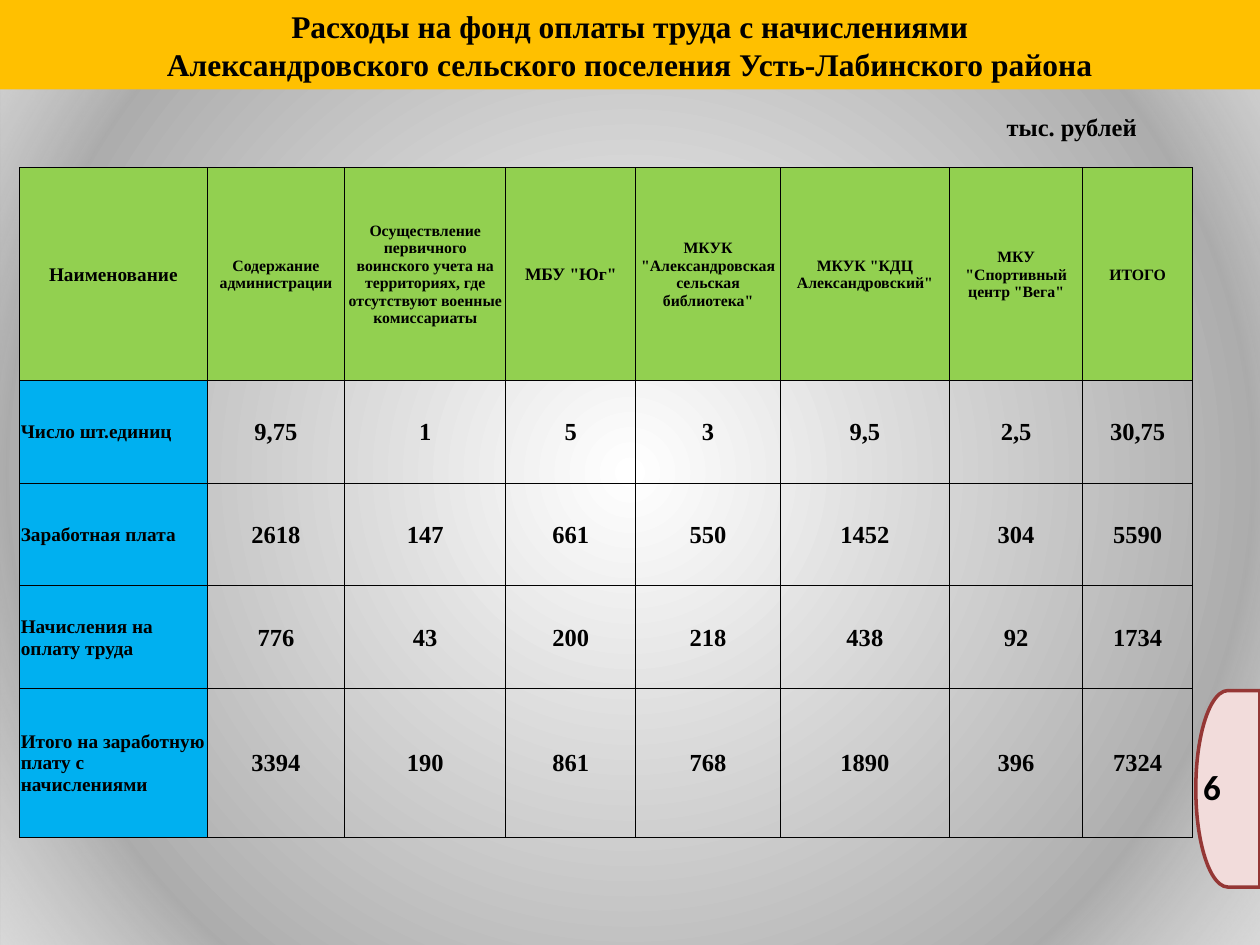
from dataclasses import dataclass

from pptx import Presentation
from pptx.dml.color import RGBColor
from pptx.enum.shapes import MSO_SHAPE
from pptx.enum.text import MSO_ANCHOR, MSO_AUTO_SIZE, PP_ALIGN
from pptx.oxml import parse_xml
from pptx.oxml.ns import nsdecls
from pptx.util import Inches, Pt

RECT, DELAY = MSO_SHAPE.RECTANGLE, MSO_SHAPE.FLOWCHART_DELAY
LEFT, MID = PP_ALIGN.LEFT, PP_ALIGN.CENTER
TITLE_ONLY = 5
COLS, ROWS = 100, 75  # the slide grid


@dataclass(frozen=True)
class Theme:
    serif: str = "Times New Roman"
    sans: str = "Calibri"
    ink: str = "000000"
    band: str = "FFC000"
    head: str = "92D050"
    side: str = "00B0F0"
    tab: str = "F2DCDB"
    edge: str = "953735"
    # gradient stops: position, colour, opacity (percent)
    back: tuple = ((0, "FFFFFF", 100), (100, "979797", 100))
    glow: tuple = ((79, "FFFFFF", 0), (100, "D9D9D9", 100))
    title: int = 18
    page: int = 20
    body: int = 14
    label: int = 11
    mid: int = 10
    small: int = 9


def paint(fill, color):
    fill.solid()
    fill.fore_color.rgb = RGBColor.from_string(color)


def radial(solid, stops):
    """Replace a solid fill element by a gradient from the centre out."""
    marks = "".join(
        f'<a:gs pos="{pos * 1000}"><a:srgbClr val="{color}">'
        f'<a:alpha val="{alpha * 1000}"/></a:srgbClr></a:gs>'
        for pos, color, alpha in stops)
    grad = parse_xml(
        f'<a:gradFill {nsdecls("a")} rotWithShape="1"><a:gsLst>{marks}</a:gsLst>'
        '<a:path path="circle"><a:fillToRect l="50000" t="50000" r="50000" b="50000"/>'
        '</a:path></a:gradFill>')
    solid.getparent().replace(solid, grad)


class Page:
    def __init__(self, deck, theme):
        self.theme = theme
        self.wide, self.high = deck.slide_width, deck.slide_height
        self.slide = deck.slides.add_slide(deck.slide_layouts[TITLE_ONLY])
        self.shapes = self.slide.shapes

    def area(self, x, y, w, h):
        dx, dy = self.wide / COLS, self.high / ROWS
        return [round(v) for v in (x * dx, y * dy, w * dx, h * dy)]

    def words(self, frame, text, size, align=LEFT, font=None):
        frame.text = text
        frame.word_wrap = True
        for par in frame.paragraphs:
            par.alignment = align
            par.font.name = font or self.theme.serif
            par.font.size = Pt(size)
            par.font.bold = True
            par.font.color.rgb = RGBColor.from_string(self.theme.ink)

    def backdrop(self):
        paint(self.slide.background.fill, self.theme.back[0][1])
        radial(self.slide.element.xpath(".//p:bgPr/a:solidFill")[0], self.theme.back)
        glow = self.shape(self.shapes, RECT, (0, 0, COLS, ROWS), self.theme.ink)
        radial(glow.element.xpath("./p:spPr/a:solidFill")[0], self.theme.glow)
        self.shapes.element.insert(2, glow.element)

    def title(self, text, box):
        head = self.shapes.title
        head.left, head.top, head.width, head.height = self.area(*box)
        paint(head.fill, self.theme.band)
        self.words(head.text_frame, text, self.theme.title, MID)
        head.text_frame.auto_size = MSO_AUTO_SIZE.NONE
        head.text_frame.vertical_anchor = MSO_ANCHOR.MIDDLE

    def shape(self, home, kind, box, fill, edge=None):
        item = home.add_shape(kind, *self.area(*box))
        item.shadow.inherit = False
        paint(item.fill, fill)
        if edge:
            paint(item.line.fill, edge)
            item.line.width = Pt(2)
        else:
            item.line.fill.background()
        return item

    def text(self, home, text, box, size, font=None):
        item = home.add_textbox(*self.area(*box))
        self.words(item.text_frame, text, size, font=font)

    def badge(self, text):
        """Page number on a tab at the right edge."""
        group = self.shapes.add_group_shape().shapes
        tab = self.shape(group, DELAY, (94.9, 54.8, 5.1, 15.6),
                         self.theme.tab, self.theme.edge)
        tab.rotation = 180
        self.text(group, text, (94.5, 60.3, 5.4, 4.4), self.theme.page, self.theme.sans)

    def border(self, cell):
        props = cell._tc.get_or_add_tcPr()
        for spot, side in enumerate("LRTB"):
            props.insert(spot, parse_xml(
                f'<a:ln{side} {nsdecls("a")} w="{Pt(0.5)}"><a:solidFill>'
                f'<a:srgbClr val="{self.theme.ink}"/></a:solidFill></a:ln{side}>'))

    def table(self, x, y, wides, highs, data, sizes):
        box = self.area(x, y, sum(wides), sum(highs))
        grid = self.shapes.add_table(len(highs), len(wides), *box).table
        grid.first_row = grid.horz_banding = False
        for col, wide in zip(grid.columns, wides):
            col.width = self.area(0, 0, wide, 0)[2]
        for row, high in zip(grid.rows, highs):
            row.height = self.area(0, 0, 0, high)[3]
        for r, line in enumerate(data):
            for c, text in enumerate(line):
                cell = grid.cell(r, c)
                cell.margin_left = cell.margin_right = cell.margin_top = Inches(0.01)
                cell.margin_bottom = 0
                cell.vertical_anchor = MSO_ANCHOR.MIDDLE
                if r == 0:
                    size, align, fill = sizes[c], MID, self.theme.head
                elif c == 0:
                    size, align, fill = self.theme.label, LEFT, self.theme.side
                else:
                    size, align, fill = self.theme.body, MID, None
                self.words(cell.text_frame, text, size, align)
                if fill:
                    paint(cell.fill, fill)
                else:
                    cell.fill.background()
                self.border(cell)


DATA = [
    ["Наименование", "Содержание администрации",
     "Осуществление первичного воинского учета на территориях, "
     "где отсутствуют военные комиссариаты",
     'МБУ "Юг"', 'МКУК "Александровская сельская библиотека"',
     'МКУК "КДЦ Александровский"', 'МКУ "Спортивный центр "Вега"', "ИТОГО"],
    ["Число шт.единиц", "9,75", "1", "5", "3", "9,5", "2,5", "30,75"],
    ["Заработная плата", "2618", "147", "661", "550", "1452", "304", "5590"],
    ["Начисления на оплату труда", "776", "43", "200", "218", "438", "92", "1734"],
    ["Итого на заработную плату с начислениями",
     "3394", "190", "861", "768", "1890", "396", "7324"],
]
WIDES = [14.9, 10.9, 12.8, 10.3, 11.5, 13.4, 10.6, 8.7]
HIGHS = [16.9] + [8.15] * 3 + [11.8]


def main():
    deck = Presentation()
    deck.slide_width, deck.slide_height = Inches(10), Inches(7.5)
    theme = Theme()
    page = Page(deck, theme)
    page.backdrop()
    page.title("Расходы на фонд оплаты труда с начислениями\n"
               "Александровского сельского поселения Усть-Лабинского района",
               (0, 0, COLS, 7.1))
    page.badge("6")
    page.text(page.shapes, "тыс. рублей", (78.9, 8.4, 19.1, 3.4), theme.body)
    sizes = [theme.label] + [theme.small] * 2 + [theme.mid] + [theme.small] * 4
    page.table(1.55, 13.3, WIDES, HIGHS, DATA, sizes)
    deck.save("out.pptx")


if __name__ == "__main__":
    main()
